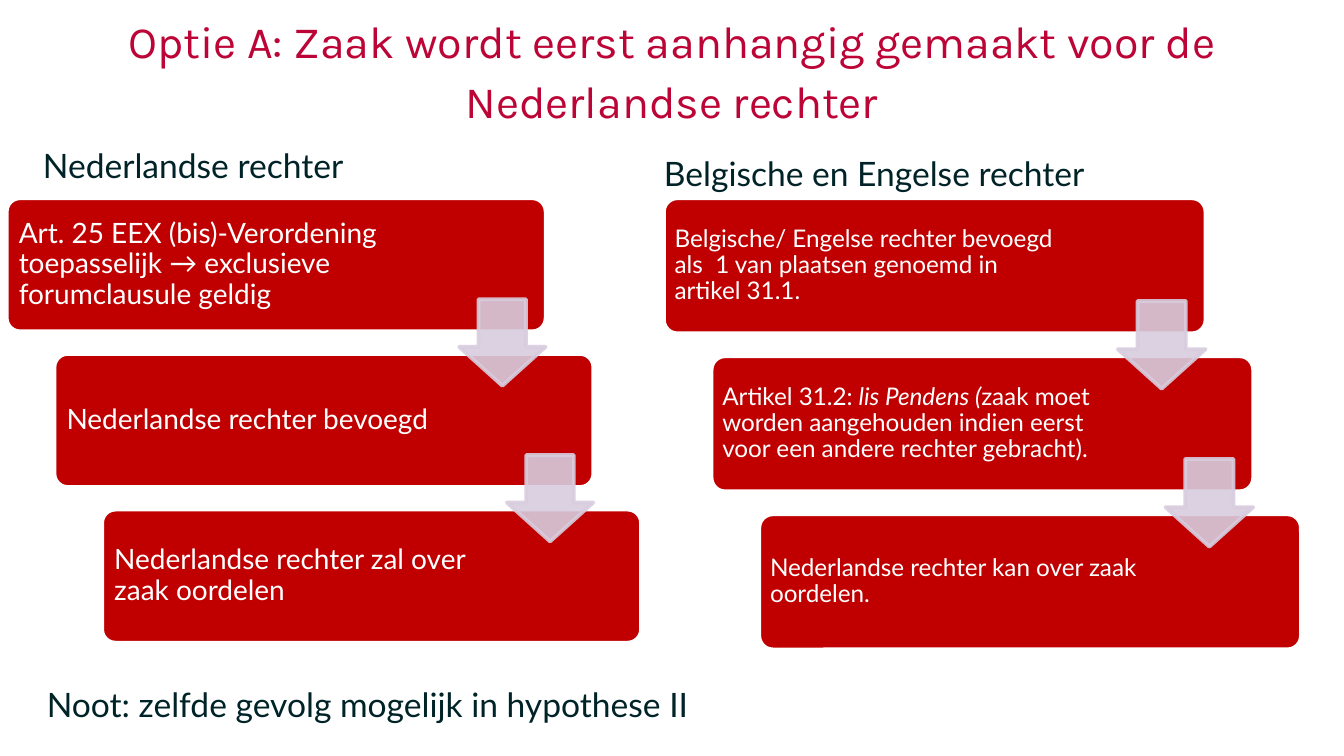
from lxml import etree
from pptx import Presentation
from pptx.dml.color import RGBColor
from pptx.enum.shapes import MSO_SHAPE
from pptx.enum.text import MSO_ANCHOR, PP_ALIGN
from pptx.oxml.ns import qn
from pptx.util import Inches, Pt

ROUNDED = MSO_SHAPE.ROUNDED_RECTANGLE
DOWN_ARROW = MSO_SHAPE.DOWN_ARROW
TOP, MIDDLE = MSO_ANCHOR.TOP, MSO_ANCHOR.MIDDLE
LEFT, CENTER = PP_ALIGN.LEFT, PP_ALIGN.CENTER

CRIMSON = RGBColor(0xBC, 0x04, 0x36)
INK = RGBColor(0x00, 0x23, 0x28)
RED = RGBColor(0xC0, 0x00, 0x00)
LILAC = RGBColor(0xD8, 0xCD, 0xDE)
WHITE = RGBColor(0xFF, 0xFF, 0xFF)

COLUMNS, ROWS = 100, 56.25
SLIDE_WIDTH = Inches(10)
SLIDE_HEIGHT = SLIDE_WIDTH * 9 // 16

DUTCH_STEPS = [
    ["Art. 25 EEX (bis)-Verordening toepasselijk → exclusieve forumclausule geldig"],
    ["Nederlandse rechter bevoegd"],
    ["Nederlandse rechter zal over zaak oordelen"],
]
FOREIGN_STEPS = [
    ["Belgische/ Engelse rechter bevoegd als  1 van plaatsen genoemd in artikel 31.1."],
    [
        "Artikel 31.2: ",
        "lis Pendens (",
        "zaak moet worden aangehouden indien eerst voor een andere rechter gebracht).",
    ],
    ["Nederlandse rechter kan over zaak oordelen."],
]


def grid(left, top, width, height):
    column, row = SLIDE_WIDTH / COLUMNS, SLIDE_HEIGHT / ROWS
    return [round(n) for n in (left * column, top * row, width * column, height * row)]


def add_text(shapes, place, runs, size, color, font="Lato", align=LEFT,
             anchor=TOP, spacing=None, insets=(0, 0)):
    text_box = shapes.add_textbox(*grid(*place))
    frame = text_box.text_frame
    frame.word_wrap = True
    frame.vertical_anchor = anchor
    frame.margin_left = frame.margin_right = Inches(insets[0])
    frame.margin_top = frame.margin_bottom = Inches(insets[1])
    paragraph = frame.paragraphs[0]
    paragraph.alignment = align
    if spacing:
        paragraph.line_spacing = spacing
    for index, text in enumerate(runs):
        run = paragraph.add_run()
        run.text = text
        run.font.name = font
        run.font.size = Pt(size)
        run.font.color.rgb = color
        run.font.italic = index % 2 == 1


def add_panel(shapes, kind, place, fill, line, adjustments):
    shape = shapes.add_shape(kind, *grid(*place))
    shape.shadow.inherit = False
    shape.fill.solid()
    shape.fill.fore_color.rgb = fill
    shape.line.color.rgb = line
    shape.line.width = Pt(2)
    for index, value in enumerate(adjustments):
        shape.adjustments[index] = value
    return shape


def make_translucent(shape, percent):
    for color in shape._element.spPr.iter(qn("a:srgbClr")):
        etree.SubElement(color, qn("a:alpha")).set("val", str(percent * 1000))


def add_staircase(slide, left, top, width, height, steps, size, inset):
    shapes = slide.shapes.add_group_shape().shapes
    corners = [
        (left + 3.55 * index, top + 1.17 * height * index)
        for index in range(len(steps))
    ]
    for (x, y), runs in zip(corners, steps):
        add_panel(shapes, ROUNDED, (x, y, width, height), RED, WHITE, [0.1])
        add_text(shapes, (x + 0.3, y + 0.3, 0.73 * width, height - 0.6), runs, size,
                 WHITE, anchor=MIDDLE, spacing=0.9, insets=(inset, inset))
    side = 0.65 * height
    for x, y in corners[:-1]:
        place = (x + width - side, y + 0.76 * height, side, side)
        arrow = add_panel(shapes, DOWN_ARROW, place, LILAC, LILAC, [0.55, 0.45])
        make_translucent(arrow, 90)


def main():
    presentation = Presentation()
    presentation.slide_width = SLIDE_WIDTH
    presentation.slide_height = SLIDE_HEIGHT
    slide = presentation.slides.add_slide(presentation.slide_layouts[6])
    shapes = slide.shapes

    add_text(shapes, (2.5, 0.6, 95, 6.3),
             ["Optie A: Zaak wordt eerst aanhangig gemaakt voor de Nederlandse rechter"],
             24, CRIMSON, font="Karla", align=CENTER, spacing=Pt(32))
    add_text(shapes, (3.2, 10.6, 43.7, 3.5), ["Nederlandse rechter"], 18, INK,
             spacing=Pt(23))
    add_staircase(slide, 0.5, 14.75, 40.1, 9.9, DUTCH_STEPS, 15, 0.06)
    add_text(shapes, (49.4, 11.2, 43.9, 3.5), ["Belgische en Engelse rechter"], 18, INK,
             spacing=Pt(23))
    add_staircase(slide, 49.4, 14.75, 40.3, 10.05, FOREIGN_STEPS, 13, 0.05)
    add_text(shapes, (2.5, 50.4, 57.1, 4),
             ["Noot: zelfde gevolg mogelijk in hypothese II"], 18, INK, insets=(0.1, 0.05))

    presentation.save("out.pptx")


if __name__ == "__main__":
    main()
